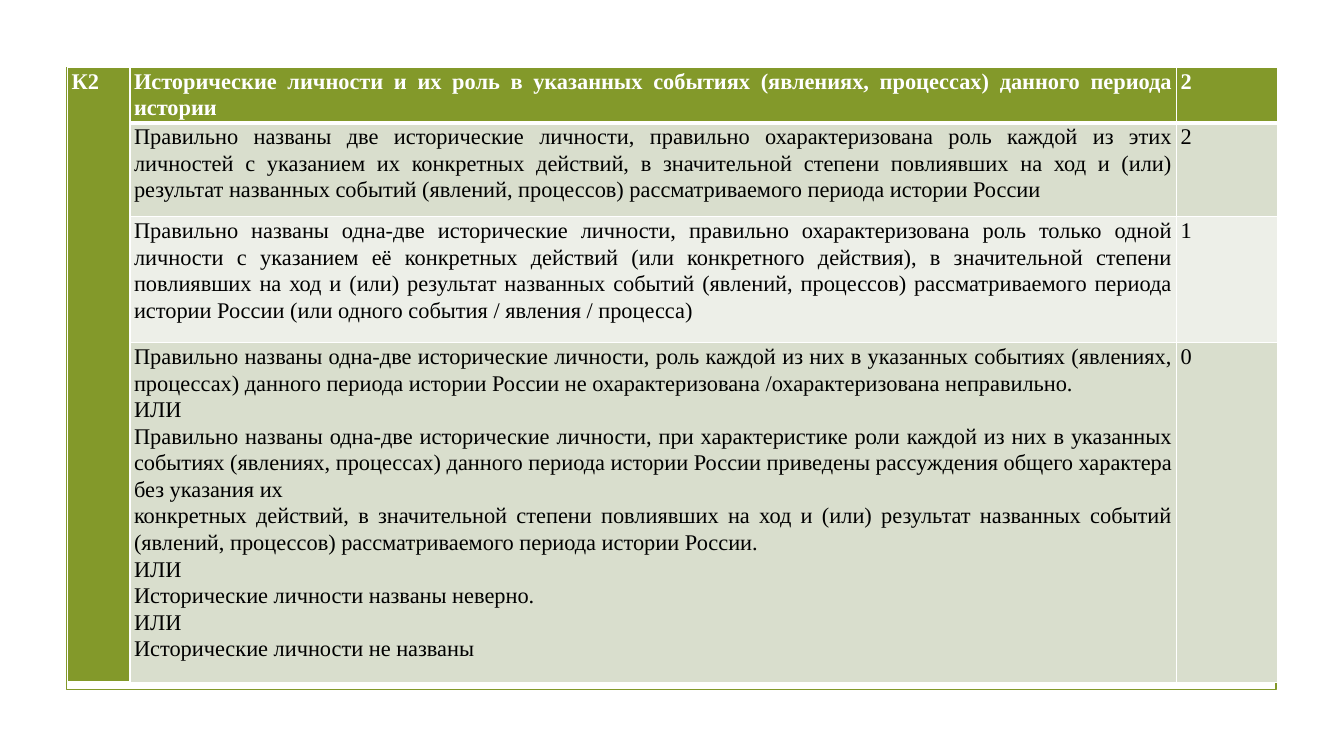
from dataclasses import dataclass

from lxml.etree import SubElement
from pptx import Presentation
from pptx.dml.color import RGBColor
from pptx.enum.shapes import MSO_SHAPE as Shape
from pptx.enum.text import PP_ALIGN as Align
from pptx.oxml.ns import qn
from pptx.util import Inches, Pt


@dataclass(frozen=True)
class Theme:
    font: str = "Times New Roman"
    size: int = 16
    line_spacing: float = 1.07
    olive: str = "83992A"
    dark_band: str = "D9DECD"
    light_band: str = "EDEFE8"
    white: str = "FFFFFF"
    black: str = "000000"
    frame_line: float = 1.25
    cell_line: int = 1
    header_line: int = 3


THEME = Theme()
LEFT, TOP, WIDTH, HEIGHT = 0.67, 0.67, 12, 6.17
COLUMN_WIDTHS = (0.62, 10.38, 1)
ROW_HEIGHTS = (0.55, 0.93, 1.25, 3.37)

# Each row: paragraphs of the criterion, then its score
CRITERION = "К2"
ROWS = [
    (["Исторические личности и их роль в указанных событиях (явлениях, процессах) "
      "данного периода истории"], "2"),
    (["Правильно названы две исторические личности, правильно охарактеризована роль "
      "каждой из этих личностей с указанием их конкретных действий, в значительной "
      "степени повлиявших на ход и (или) результат названных событий (явлений, "
      "процессов) рассматриваемого периода истории России"], "2"),
    (["Правильно названы одна-две исторические личности, правильно охарактеризована "
      "роль только одной личности с указанием её конкретных действий (или конкретного "
      "действия), в значительной степени повлиявших на ход и (или) результат "
      "названных событий (явлений, процессов) рассматриваемого периода истории России "
      "(или одного события / явления / процесса)"], "1"),
    (["Правильно названы одна-две исторические личности, роль каждой из них в "
      "указанных событиях (явлениях, процессах) данного периода истории России "
      "не охарактеризована /охарактеризована неправильно.",
      "ИЛИ",
      "Правильно названы одна-две исторические личности, при характеристике роли "
      "каждой из них в указанных событиях (явлениях, процессах) "
      "данного периода истории России приведены рассуждения общего характера "
      "без указания их",
      "конкретных действий, в значительной степени повлиявших на ход и (или) "
      "результат названных событий (явлений, процессов) рассматриваемого периода "
      "истории России.",
      "ИЛИ",
      "Исторические личности названы неверно.",
      "ИЛИ",
      "Исторические личности не названы"], "0"),
]


def color(code):
    return RGBColor.from_string(code)


def add_frame(page):
    frame = page.shapes.add_shape(Shape.RECTANGLE, Inches(LEFT - 0.01), Inches(TOP),
                                  Inches(WIDTH), Inches(HEIGHT))
    frame.shadow.inherit = False
    frame.fill.background()
    frame.line.color.rgb = color(THEME.olive)
    frame.line.width = Pt(THEME.frame_line)


def set_borders(cell, top, bottom):
    properties = cell._tc.get_or_add_tcPr()
    widths = {"L": THEME.cell_line, "R": THEME.cell_line, "T": top, "B": bottom}
    for side, width in widths.items():
        line = SubElement(properties, qn(f"a:ln{side}"), w=str(Pt(width)))
        fill = SubElement(line, qn("a:solidFill"))
        SubElement(fill, qn("a:srgbClr"), val=THEME.white)


def style_cell(cell, fill, top, bottom):
    set_borders(cell, top, bottom)
    cell.fill.solid()
    cell.fill.fore_color.rgb = color(fill)
    cell.margin_left = cell.margin_right = Inches(0.04)
    cell.margin_top = cell.margin_bottom = 0


def write_cell(cell, lines, header):
    cell.text = "\n".join(lines)
    for para in cell.text_frame.paragraphs:
        para.alignment = Align.JUSTIFY
        para.line_spacing = THEME.line_spacing
        para.font.name = THEME.font
        para.font.size = Pt(THEME.size)
        para.font.bold = header
        para.font.color.rgb = color(THEME.white if header else THEME.black)


def add_criteria_table(page):
    table = page.shapes.add_table(len(ROW_HEIGHTS), len(COLUMN_WIDTHS), Inches(LEFT),
                                  Inches(TOP), Inches(WIDTH), Inches(HEIGHT)).table
    for column, width in zip(table.columns, COLUMN_WIDTHS):
        column.width = Inches(width)
    for row, height in zip(table.rows, ROW_HEIGHTS):
        row.height = Inches(height)

    # Criterion code spans the first column
    last = len(ROWS) - 1
    code = table.cell(0, 0)
    code.merge(table.cell(last, 0))
    for index in range(len(ROWS)):
        style_cell(table.cell(index, 0), THEME.olive, THEME.cell_line, THEME.header_line)
    write_cell(code, [CRITERION], True)

    # Header row, then alternating bands
    for index, (lines, score) in enumerate(ROWS):
        header = index == 0
        band = THEME.dark_band if index % 2 else THEME.light_band
        top = THEME.header_line if index == 1 else THEME.cell_line
        bottom = THEME.header_line if header else THEME.cell_line
        for column, content in ((1, lines), (2, [score])):
            cell = table.cell(index, column)
            style_cell(cell, THEME.olive if header else band, top, bottom)
            write_cell(cell, content, header)


def main():
    deck = Presentation()
    deck.slide_width, deck.slide_height = Inches(13.33), Inches(7.5)
    page = deck.slides.add_slide(deck.slide_layouts[6])
    add_frame(page)
    add_criteria_table(page)
    deck.save("out.pptx")


if __name__ == "__main__":
    main()
